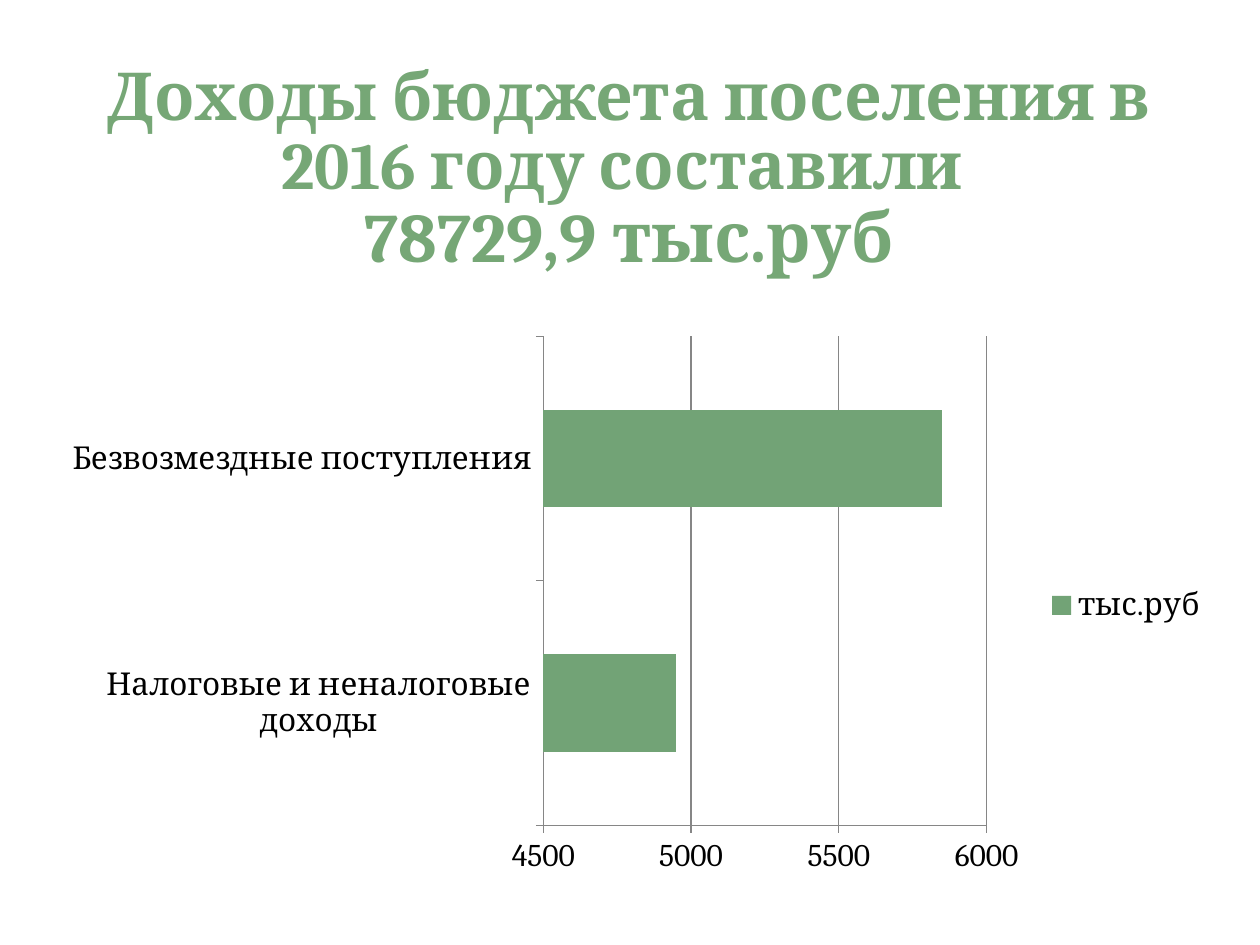
import dataclasses
import pptx
import pptx.chart.data
import pptx.dml.color
import pptx.enum.chart
import pptx.enum.text
import pptx.util

Inches = pptx.util.Inches
Pt = pptx.util.Pt
FONT = "Cambria"


@dataclasses.dataclass
class Box:
    left: float
    top: float
    width: float
    height: float

    def lengths(self) -> tuple:
        return tuple(Inches(v) for v in dataclasses.astuple(self))


@dataclasses.dataclass
class Income:
    category: str
    amount: int


INCOMES = [
    Income("Налоговые и неналоговые доходы", 4950),
    Income("Безвозмездные поступления", 5850),
]


def color(value: str) -> pptx.dml.color.RGBColor:
    return pptx.dml.color.RGBColor.from_string(value)


def style_font(font, size: float, hex_color: str, bold: bool = False) -> None:
    font.name = FONT
    font.size = Pt(size)
    font.bold = bold
    font.color.rgb = color(hex_color)


def style_line(line) -> None:
    line.width = Pt(0.75)
    line.color.rgb = color("868686")


def draw_title(s, box: Box) -> None:
    sp = s.shapes.title
    sp.left, sp.top, sp.width, sp.height = box.lengths()
    tf = sp.text_frame
    tf.word_wrap = True
    tf.auto_size = pptx.enum.text.MSO_AUTO_SIZE.NONE
    tf.vertical_anchor = pptx.enum.text.MSO_ANCHOR.BOTTOM
    tf.text = "Доходы бюджета поселения в 2016 году составили \v78729,9 тыс.руб"
    p = tf.paragraphs[0]
    p.alignment = pptx.enum.text.PP_ALIGN.CENTER
    p.line_spacing = 0.88
    for r, size in zip(p.runs, (37.8, 39.6)):
        style_font(r.font, size, "76A776", bold=True)


def draw_chart(s, box: Box, incomes: list[Income]) -> None:
    data = pptx.chart.data.CategoryChartData(number_format="General")
    data.categories = [i.category for i in incomes]
    data.add_series("тыс.руб", [i.amount for i in incomes])
    kind = pptx.enum.chart.XL_CHART_TYPE.BAR_STACKED
    chart = s.shapes.add_chart(kind, *box.lengths(), data).chart
    style_font(chart.font, 18, "000000")
    chart.has_title = False
    chart.has_legend = True
    chart.legend.position = pptx.enum.chart.XL_LEGEND_POSITION.RIGHT
    chart.legend.include_in_layout = False

    plot = chart.plots[0]
    plot.vary_by_categories = False
    plot.gap_width = 150
    plot.overlap = 100
    fill = plot.series[0].format.fill
    fill.solid()
    fill.fore_color.rgb = color("72A376")

    for axis in (chart.category_axis, chart.value_axis):
        axis.major_tick_mark = pptx.enum.chart.XL_TICK_MARK.OUTSIDE
        style_line(axis.format.line)
    axis = chart.value_axis
    axis.minimum_scale, axis.maximum_scale, axis.major_unit = 4500, 6000, 500
    axis.has_major_gridlines = True
    style_line(axis.major_gridlines.format.line)


def main() -> None:
    prs = pptx.Presentation()
    prs.slide_width = Inches(10)
    prs.slide_height = Inches(7.5)
    s = prs.slides.add_slide(prs.slide_layouts[5])
    draw_title(s, Box(0.23, 0.23, 9.53, 2.02))
    draw_chart(s, Box(0.39, 2.58, 9.3, 4.45), INCOMES)
    prs.save("out.pptx")


if __name__ == "__main__":
    main()
